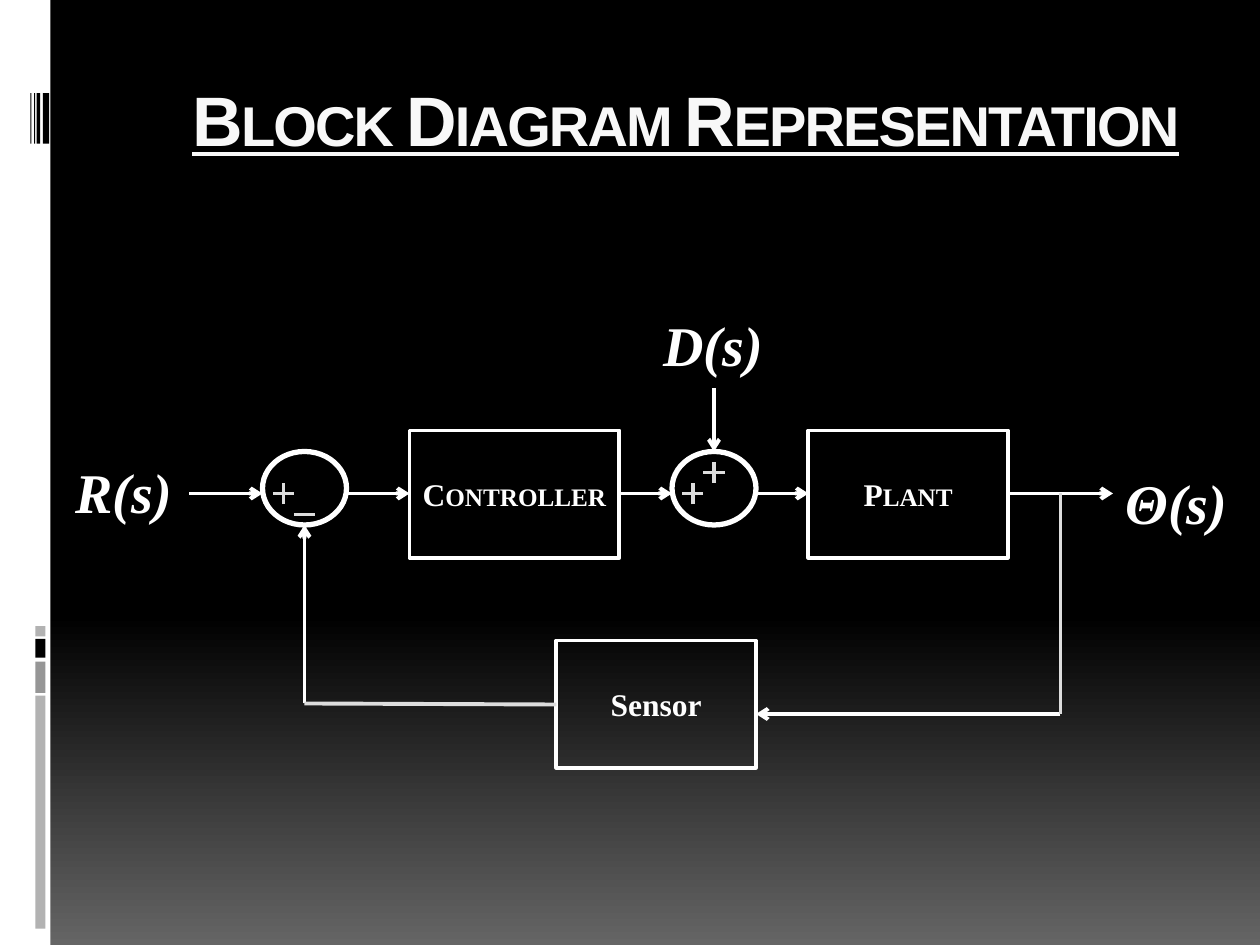
from lxml.etree import SubElement
from pptx import Presentation
from pptx.dml.color import RGBColor
from pptx.enum.shapes import MSO_CONNECTOR, MSO_SHAPE
from pptx.enum.text import MSO_ANCHOR, MSO_AUTO_SIZE, PP_ALIGN
from pptx.oxml.ns import qn
from pptx.util import Inches, Pt

COLORS = {
    "ink": "FFFFFF", "wire": "DDDDDD", "title": "F8F8F8", "black": "000000",
    "glow": "656565", "light": "B2B2B2", "mid": "969696",
}
UNIT = 1 / 12
SIGNAL_ROW = 47
BLOCK_HEIGHT = 12.12
STROKE = 2.25

TITLE = "Block Diagram Representation"
SIDEBAR = [
    (0, 0, 0.4, 7.5, "ink"),
    (0.28, 5.52, 0.08, 1.85, "light"),
    (0.28, 5.25, 0.08, 0.25, "mid"),
    (0.28, 5.07, 0.08, 0.15, "black"),
    (0.28, 4.97, 0.08, 0.08, "light"),
]
BARCODE = [(0.34, 0.05), (0.29, 0.03), (0.27, 0.01), (0.24, 0.01)]
SUMMING_JUNCTIONS = [25, 64]
BLOCKS = [
    ("Controller", 39, 41, 20, True),
    ("Plant", 77, 41, 19, True),
    ("Sensor", 53, 61, 19, False),
]
SIGNALS = [("R(s)", 6, 43, 0.98), ("Θ(s)", 106, 44, 1.02), ("D(s)", 62, 29, 1)]
FORWARD_PATH = [(18, 25), (33, 39), (59, 64), (72, 77), (96, 106)]
ARROWS = [((a, SIGNAL_ROW), (b, SIGNAL_ROW)) for a, b in FORWARD_PATH] + [
    ((29, 67), (29, 50)),
    ((101, 68), (72, 68)),
    ((68, 37), (68, 43)),
]
FEEDBACK_WIRES = [((29, 67), (53, 67.1)), ((101, 68), (101, SIGNAL_ROW))]
PLUS_SIGNS = [(27, 47), (66, 47), (68, 45)]
MINUS_SIGNS = [(29, 49)]

TITLE_FONT = {"name": "Arial", "size": Pt(40), "bold": True, "underline": True}
BLOCK_FONT = {"name": "Times New Roman", "size": Pt(18), "bold": True}
SIGNAL_FONT = {"name": "Times New Roman", "size": Pt(32), "bold": True, "italic": True}


def rgb(key):
    return RGBColor.from_string(COLORS[key])


def apply(target, values):
    for name, value in values.items():
        setattr(target, name, value)


def write(frame, words, font, color, frame_format, align, small_caps=False):
    apply(frame, frame_format)
    paragraph = frame.paragraphs[0]
    paragraph.alignment = align
    run = paragraph.add_run()
    run.text = words
    apply(run.font, font)
    run.font.color.rgb = rgb(color)
    if small_caps:
        run.font._element.set("cap", "small")
    return run


def draw(slide, kind, box, fill=None, stroke=None):
    shape = slide.shapes.add_shape(kind, *map(Inches, box))
    shape.shadow.inherit = False
    if fill:
        shape.fill.solid()
        shape.fill.fore_color.rgb = rgb(fill)
    else:
        shape.fill.background()
    if stroke:
        shape.line.color.rgb = rgb("ink")
        shape.line.width = Pt(stroke)
    else:
        shape.line.fill.background()
    return shape


def connect(slide, start, end, color, arrow=False):
    ends = [Inches(cell * UNIT) for cell in (*start, *end)]
    wire = slide.shapes.add_connector(MSO_CONNECTOR.STRAIGHT, *ends)
    wire.line.color.rgb = rgb(color)
    wire.line.width = Pt(STROKE)
    if arrow:
        SubElement(wire.line._get_or_add_ln(), qn("a:tailEnd"), type="arrow")
    SubElement(wire._element.spPr, qn("a:effectLst"))


def add_backdrop(slide):
    fill = slide.background.fill
    fill.gradient()
    fill.gradient_angle = 270
    for stop, (position, color) in zip(fill.gradient_stops, [(0.65, "black"), (1, "glow")]):
        stop.position = position
        stop.color.rgb = rgb(color)
    for *box, color in SIDEBAR:
        draw(slide, MSO_SHAPE.RECTANGLE, box, color)
    for left, width in BARCODE:
        draw(slide, MSO_SHAPE.RECTANGLE, (left, 0.74, width, 0.4), "black")


def add_title(slide):
    box = slide.shapes.add_textbox(*map(Inches, (1, 0.56, 8.5, 1)))
    layout = {"word_wrap": True, "vertical_anchor": MSO_ANCHOR.TOP}
    run = write(box.text_frame, TITLE, TITLE_FONT, "title", layout, PP_ALIGN.CENTER, True)
    run.font._element.set("spc", "-100")


def add_diagram(slide):
    for column in SUMMING_JUNCTIONS:
        box = [cell * UNIT for cell in (column, 43, 8, 7)]
        draw(slide, MSO_SHAPE.OVAL, box, stroke=3)
    for words, column, row, width, small_caps in BLOCKS:
        box = [cell * UNIT for cell in (column, row, width, BLOCK_HEIGHT)]
        block = draw(slide, MSO_SHAPE.RECTANGLE, box, stroke=STROKE)
        layout = {"word_wrap": True, "vertical_anchor": MSO_ANCHOR.MIDDLE}
        write(block.text_frame, words, BLOCK_FONT, "ink", layout, PP_ALIGN.CENTER, small_caps)
    for start, end in ARROWS:
        connect(slide, start, end, "ink", arrow=True)
    for start, end in FEEDBACK_WIRES:
        connect(slide, start, end, "wire")
    for x, y in PLUS_SIGNS + MINUS_SIGNS:
        connect(slide, (x - 1, y), (x + 1, y), "wire")
    for x, y in PLUS_SIGNS:
        connect(slide, (x, y + 1), (x, y - 1), "wire")
    for words, column, row, width in SIGNALS:
        label = slide.shapes.add_textbox(
            *map(Inches, (column * UNIT, row * UNIT, width, 0.64)))
        layout = {"word_wrap": False, "auto_size": MSO_AUTO_SIZE.SHAPE_TO_FIT_TEXT}
        write(label.text_frame, words, SIGNAL_FONT, "ink", layout, PP_ALIGN.LEFT)


def main():
    deck = Presentation()
    apply(deck, {"slide_width": Inches(10), "slide_height": Inches(7.5)})
    slide = deck.slides.add_slide(deck.slide_layouts[6])
    add_backdrop(slide)
    add_title(slide)
    add_diagram(slide)
    deck.save("out.pptx")


if __name__ == "__main__":
    main()
